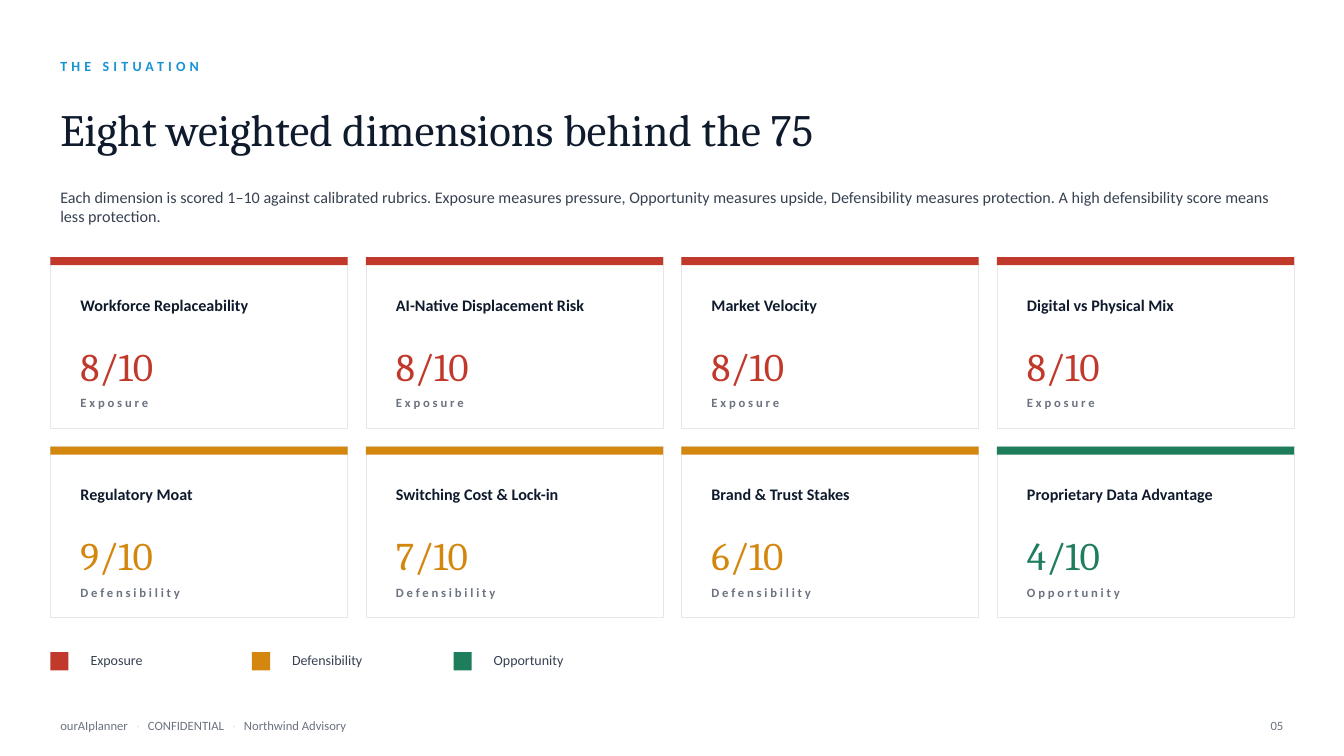
from pptx import Presentation
from pptx.dml.color import RGBColor
from pptx.enum.shapes import MSO_SHAPE
from pptx.enum.text import MSO_ANCHOR, PP_ALIGN
from pptx.util import Pt

NAVY = RGBColor(0x0F, 0x1B, 0x2D)
SLATE = RGBColor(0x37, 0x41, 0x51)
GRAY = RGBColor(0x6B, 0x72, 0x80)
RULE = RGBColor(0xE5, 0xE7, 0xEB)
WHITE = RGBColor(0xFF, 0xFF, 0xFF)
BLUE = RGBColor(0x17, 0x92, 0xD5)
RED = RGBColor(0xC0, 0x39, 0x2B)
AMBER = RGBColor(0xD4, 0x87, 0x0E)
GREEN = RGBColor(0x1E, 0x7D, 0x5A)
SANS, SERIF = "Calibri", "Cambria"

EYEBROW = "THE SITUATION"
TITLE = "Eight weighted dimensions behind the 75"
INTRO = ("Each dimension is scored 1–10 against calibrated rubrics. Exposure measures "
         "pressure, Opportunity measures upside, Defensibility measures protection. "
         "A high defensibility score means less protection.")
CATEGORIES = {"Exposure": RED, "Defensibility": AMBER, "Opportunity": GREEN}
DIMENSIONS = [
    ("Workforce Replaceability", 8, "Exposure"),
    ("AI-Native Displacement Risk", 8, "Exposure"),
    ("Market Velocity", 8, "Exposure"),
    ("Digital vs Physical Mix", 8, "Exposure"),
    ("Regulatory Moat", 9, "Defensibility"),
    ("Switching Cost & Lock-in", 7, "Defensibility"),
    ("Brand & Trust Stakes", 6, "Defensibility"),
    ("Proprietary Data Advantage", 4, "Opportunity"),
]
FOOTER = ["ourAIplanner", "CONFIDENTIAL", "Northwind Advisory"]
PAGE = "05"

# Layout in points
LEFT = 36
GRID_TOP = 183.6
COLUMNS = 4
CARD_W, CARD_H = 212.4, 122.4
GAP = 12.96
BAR_H = 5.76
INSET = 14.4
LEGEND_TOP, LEGEND_STEP = 460.8, 144
SWATCH = 12.96
FOOTER_TOP = 507.6

deck = Presentation()
deck.slide_width, deck.slide_height = Pt(960), Pt(540)
slide = deck.slides.add_slide(deck.slide_layouts[6])


def add_run(paragraph, text, size, color, face=SANS, bold=False, spacing=0):
    """Append a run; spacing is the extra space after each letter, in points."""
    run = paragraph.add_run()
    run.text = text
    run.font.name = face
    run.font.size = Pt(size)
    run.font.bold = bold
    run.font.color.rgb = color
    if spacing:
        run.font._element.set("spc", str(round(spacing * 100)))


def add_line(left, top, width, height):
    """Add a wrapped, vertically centred text box and return its paragraph."""
    frame = slide.shapes.add_textbox(Pt(left), Pt(top), Pt(width), Pt(height)).text_frame
    frame.word_wrap = True
    frame.vertical_anchor = MSO_ANCHOR.MIDDLE
    return frame.paragraphs[0]


def add_rect(left, top, width, height, fill, outline=None):
    rect = slide.shapes.add_shape(MSO_SHAPE.RECTANGLE, Pt(left), Pt(top), Pt(width), Pt(height))
    rect.shadow.inherit = False
    rect.fill.solid()
    rect.fill.fore_color.rgb = fill
    if outline is None:
        rect.line.fill.background()
    else:
        rect.line.color.rgb = outline
        rect.line.width = Pt(0.5)


def add_card(left, top, dimension, score, category):
    color = CATEGORIES[category]
    add_rect(left, top, CARD_W, CARD_H, WHITE, RULE)
    add_rect(left, top, CARD_W, BAR_H, color)
    text_left, text_w = left + INSET, CARD_W - 2 * INSET
    add_run(add_line(text_left, top + 14.4, text_w, 39.6), dimension, 11.5, NAVY, bold=True)
    add_run(add_line(text_left, top + 57.6, text_w, 39.6), f"{score}/10", 28, color, SERIF)
    add_run(add_line(text_left, top + 95.04, text_w, 18), category, 9, GRAY,
            bold=True, spacing=2)


add_run(add_line(LEFT, 36, 432, 21.6), EYEBROW, 10, BLUE, bold=True, spacing=3)
add_run(add_line(LEFT, 61.2, 864, 61.2), TITLE, 32, NAVY, SERIF)
add_run(add_line(LEFT, 126, 885.6, 43.2), INTRO, 11.5, SLATE)

for index, dimension in enumerate(DIMENSIONS):
    row, column = divmod(index, COLUMNS)
    # The column pitch is a little wider than the row pitch
    add_card(LEFT + column * (CARD_W + GAP), GRID_TOP + row * (CARD_H + GAP), *dimension)

for index, (category, color) in enumerate(CATEGORIES.items()):
    left = LEFT + index * LEGEND_STEP
    add_rect(left, LEGEND_TOP + 5.04, SWATCH, SWATCH, color)
    add_run(add_line(left + 21.6, LEGEND_TOP, 129.6, 21.6), category, 10, SLATE)

footer = add_line(LEFT, FOOTER_TOP, 720, 21.6)
add_run(footer, FOOTER[0], 9, GRAY)
for part in FOOTER[1:]:
    add_run(footer, " ·", 9, RULE, spacing=4)
    add_run(footer, " " + part, 9, GRAY)

page = add_line(887.76, FOOTER_TOP, 36, 21.6)
page.alignment = PP_ALIGN.RIGHT
add_run(page, PAGE, 9, GRAY)

deck.save("out.pptx")
